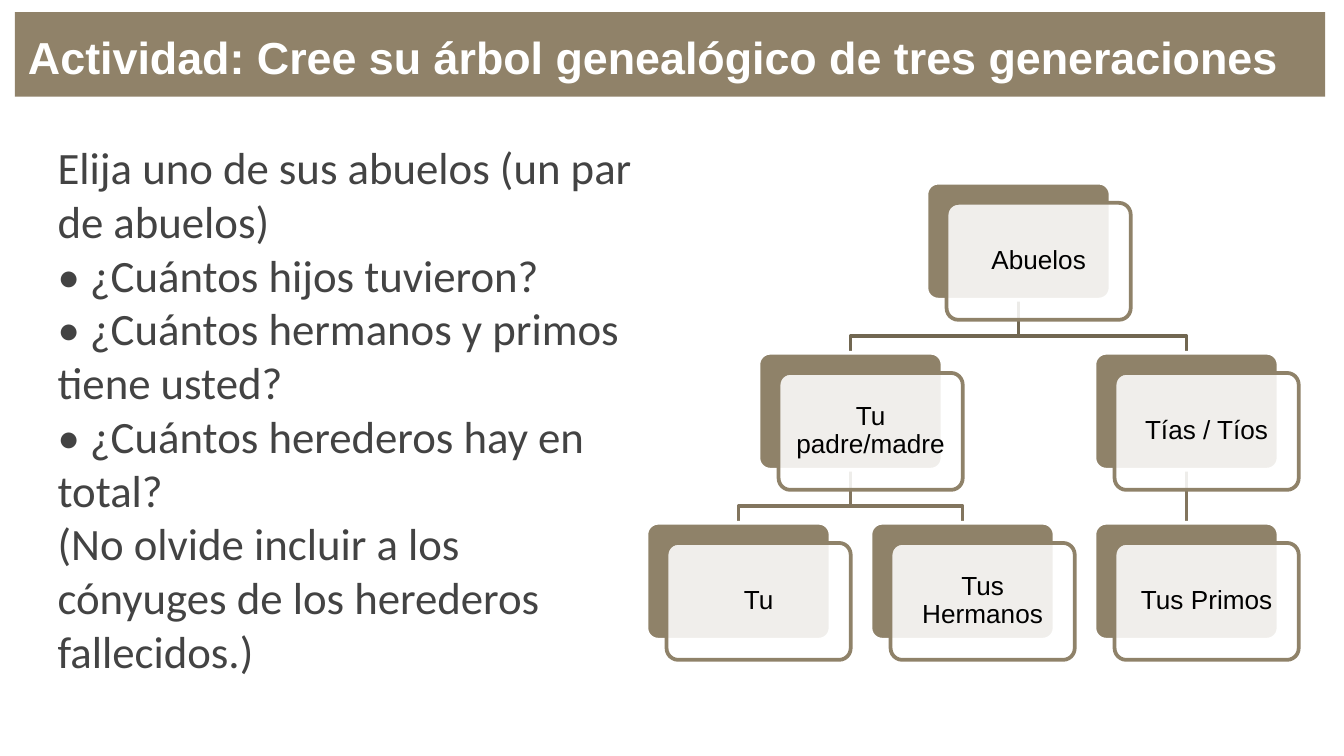
from lxml.etree import SubElement
from pptx import Presentation
from pptx.dml.color import RGBColor
from pptx.enum.shapes import MSO_CONNECTOR as Link, MSO_SHAPE as Kind
from pptx.enum.text import MSO_ANCHOR as Anchor, PP_ALIGN as Align
from pptx.oxml.ns import qn
from pptx.util import Inches as In, Pt

TAN, DARK, MID = "8F8269", "716751", "82755E"
WIDE, HIGH = 1.37, 0.87      # card size
LEFT, TOP = 4.81, 1.36       # origin of the tree grid
COL, ROW = 5 / 6, 1.265      # grid steps
SHIFT = 0.15                 # offset of the front card

# name: (label, column, row)
TREE = {
    "old": ("Abuelos", 2.5, 0),
    "dad": ("Tu padre/madre", 1, 1),
    "you": ("Tu", 0, 2),
    "sib": ("Tus Hermanos", 2, 2),
    "aunt": ("Tías / Tíos", 4, 1),
    "kin": ("Tus Primos", 4, 2),
}
LINKS = [("aunt", "kin", MID), ("old", "aunt", DARK), ("dad", "sib", MID),
         ("dad", "you", MID), ("old", "dad", DARK)]
ASK = [
    "Elija uno de sus abuelos (un par de abuelos)",
    "• ¿Cuántos hijos tuvieron?",
    "• ¿Cuántos hermanos y primos tiene usted?",
    "• ¿Cuántos herederos hay en total?",
    "(No olvide incluir a los cónyuges de los herederos fallecidos.)",
]


def tint(code):
    return RGBColor.from_string(code)


def spot(col, row):
    """Top left corner, in inches, of a card on the tree grid."""
    return LEFT + col * COL, TOP + row * ROW


class Deck:
    def __init__(self, wide, high):
        self.file = Presentation()
        self.file.slide_width, self.file.slide_height = In(wide), In(high)
        self.slide = self.file.slides.add_slide(self.file.slide_layouts[6])
        self.shapes = self.slide.shapes

    def text(self, lines, x, y, w, h, size=14, font="Arial", color="000000",
             bold=False, pad=0.1, anchor=Anchor.TOP, align=Align.LEFT, lead=1.0):
        frame = self.shapes.add_textbox(In(x), In(y), In(w), In(h)).text_frame
        frame.word_wrap = True
        frame.vertical_anchor = anchor
        frame.margin_left = frame.margin_right = In(pad)
        frame.margin_top = frame.margin_bottom = In(pad)
        frame.text = "\n".join(lines)
        for para in frame.paragraphs:
            para.alignment, para.line_spacing = align, lead
            face = para.font
            face.name, face.size, face.bold = font, Pt(size), bold
            face.color.rgb = tint(color)

    def box(self, kind, x, y, w, h, fill, line=None, alpha=None):
        shape = self.shapes.add_shape(kind, In(x), In(y), In(w), In(h))
        shape.shadow.inherit = False
        shape.fill.solid()
        shape.fill.fore_color.rgb = tint(fill)
        if kind == Kind.ROUNDED_RECTANGLE:
            shape.adjustments[0] = 0.1
        if alpha:
            tone = shape.fill._xPr.find(qn("a:solidFill"))[0]
            SubElement(tone, qn("a:alpha"), val=str(alpha * 1000))
        if line:
            self.rule(shape, line)
        else:
            shape.line.fill.background()

    def rule(self, shape, color):
        shape.line.color.rgb = tint(color)
        shape.line.width = Pt(2)

    def card(self, label, col, row):
        x, y = spot(col, row)
        kind = Kind.ROUNDED_RECTANGLE
        self.box(kind, x, y, WIDE, HIGH, TAN, "FFFFFF")
        x, y = x + SHIFT, y + SHIFT
        self.box(kind, x, y, WIDE, HIGH, "FFFFFF", TAN, alpha=87)
        self.text([label], x + 0.03, y + 0.02, WIDE - 0.06, HIGH - 0.05,
                  pad=0.06, anchor=Anchor.MIDDLE, align=Align.CENTER, lead=0.9)

    def link(self, start, end, color):
        """Join two grid cells: straight in one column, else with an elbow."""
        (x, y), (far, low) = spot(*start), spot(*end)
        x, y, far = x + WIDE / 2, y + HIGH, far + WIDE / 2
        if x == far:
            line = self.shapes.add_connector(
                Link.STRAIGHT, In(x), In(y), In(far), In(low))
            SubElement(line._element.spPr, qn("a:effectLst"))
        else:
            bend = y + 0.27
            path = self.shapes.build_freeform(In(x), In(y))
            path.add_line_segments(
                [(In(x), In(bend)), (In(far), In(bend)), (In(far), In(low))],
                close=False)
            line = path.convert_to_shape()
            line.fill.background()
            line.shadow.inherit = False
        self.rule(line, color)


def main():
    deck = Deck(10, 10 * 9 / 16)
    deck.box(Kind.RECTANGLE, 0.11, 0.09, 9.75, 0.63, "908269")
    deck.text(["Actividad: Cree su árbol genealógico de tres generaciones"],
              0.11, 0.09, 9.89, 0.63, size=24, color="FFFFFF", bold=True,
              anchor=Anchor.BOTTOM)
    deck.text(ASK, 0.33, 0.94, 4.48, 4.2, size=24, font="Calibri",
              color="434343")
    for start, end, color in LINKS:
        deck.link(TREE[start][1:], TREE[end][1:], color)
    for label, col, row in TREE.values():
        deck.card(label, col, row)
    deck.file.save("out.pptx")


if __name__ == "__main__":
    main()
